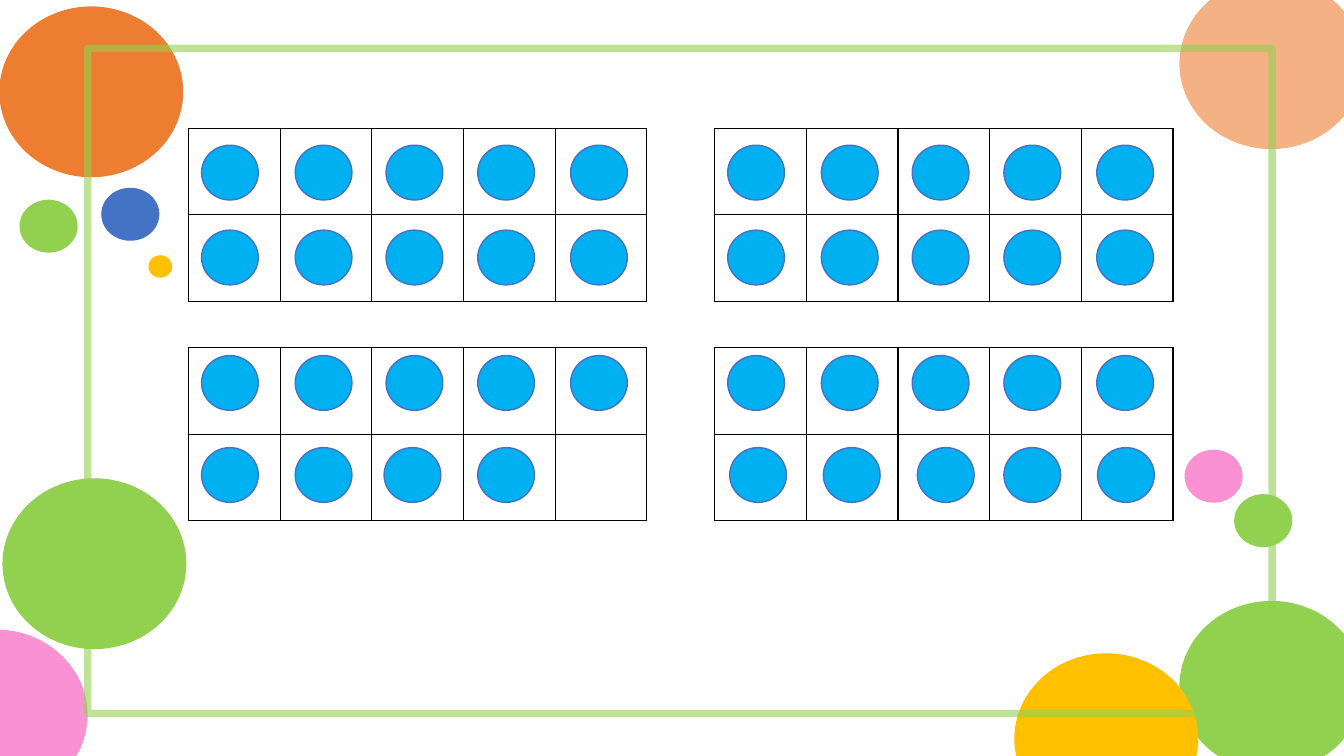
"""Build a slide of four ten frames that show thirty-nine counters."""
from dataclasses import dataclass

from lxml.etree import SubElement
from pptx import Presentation
from pptx.dml.color import RGBColor
from pptx.enum.shapes import MSO_SHAPE as Preset
from pptx.oxml.ns import qn
from pptx.shapes.autoshape import Shape
from pptx.slide import Slide
from pptx.table import _Cell as Cell
from pptx.util import Cm, Pt

ORANGE, PEACH, AMBER = "ED7D31", "F4B183", "FFC000"
GREEN, PINK, BLUE = "92D050", "F991D3", "4472C4"
SKY, BLACK, WHITE = "00B0F0", "000000", "FFFFFF"

LARGE, MEDIUM, SMALL = (4.6, 4.27), (1.43, 1.3), (0.56, 0.53)
COUNTER = (1.43, 1.38)
COLUMNS, ROWS = 5, 2
CELL_WIDTH, CELL_HEIGHT = 2.31, 2.18
EVEN = (0.33, 2.69, 4.98, 7.29, 9.63)


@dataclass(frozen=True)
class Bubble:
    left: float
    top: float
    size: tuple[float, float]
    colour: str


@dataclass(frozen=True)
class CounterRow:
    top: float
    lefts: tuple[float, ...] = EVEN


@dataclass(frozen=True)
class TenFrame:
    left: float
    top: float
    rows: tuple[CounterRow, CounterRow]
    fill: str | None = None


BUBBLES = (
    Bubble(0, 0.18, LARGE, ORANGE),
    Bubble(29.74, 15.16, LARGE, GREEN),
    Bubble(29.74, -0.53, LARGE, PEACH),
    Bubble(25.58, 16.48, LARGE, AMBER),
    Bubble(31.12, 12.47, MEDIUM, GREEN),
    Bubble(29.87, 11.35, MEDIUM, PINK),
    Bubble(-2.41, 15.88, LARGE, PINK),
    Bubble(0.08, 12.07, LARGE, GREEN),
    Bubble(0.51, 5.05, MEDIUM, GREEN),
    Bubble(2.57, 4.75, MEDIUM, BLUE),
    Bubble(3.76, 6.45, SMALL, AMBER),
)

FULL_ROWS = (CounterRow(0.43), CounterRow(2.57))
NINE = (CounterRow(0.2), CounterRow(2.52, (0.33, 2.69, 4.93, 7.29)))
TEN = (CounterRow(0.2), CounterRow(2.52, (0.38, 2.74, 5.11, 7.29, 9.65)))
TEN_FRAMES = (
    TenFrame(4.75, 3.23, FULL_ROWS),
    TenFrame(4.75, 8.76, NINE, WHITE),
    TenFrame(18.01, 3.23, FULL_ROWS),
    TenFrame(18.01, 8.76, TEN, WHITE),
)


def colour(value: str) -> RGBColor:
    """Turn a hex string into a colour."""
    return RGBColor.from_string(value)


def draw_shape(slide: Slide, preset: Preset, left: float, top: float,
               size: tuple[float, float], *, line: str,
               fill: str | None = None, weight: float = 1) -> Shape:
    """Draw one preset shape measured in centimetres."""
    shape = slide.shapes.add_shape(preset, Cm(left), Cm(top), *map(Cm, size))
    shape.shadow.inherit = False
    if fill:
        shape.fill.solid()
        shape.fill.fore_color.rgb = colour(fill)
    else:
        shape.fill.background()
    shape.line.color.rgb = colour(line)
    shape.line.width = Pt(weight)
    return shape


def draw_border(slide: Slide) -> None:
    """Draw the translucent green border of the page."""
    border = draw_shape(slide, Preset.RECTANGLE, 2.21, 1.22, (29.85, 16.76),
                        line=GREEN, weight=5.25)
    tint = border.line._ln.find(f".//{qn('a:srgbClr')}")
    SubElement(tint, qn("a:alpha"), val="58000")


def format_cell(cell: Cell, fill: str | None) -> None:
    """Give a cell black edges and its fill."""
    properties = cell._tc.get_or_add_tcPr()
    for side in ("a:lnL", "a:lnR", "a:lnT", "a:lnB"):
        edge = SubElement(properties, qn(side), w=str(Pt(1)))
        paint = SubElement(edge, qn("a:solidFill"))
        SubElement(paint, qn("a:srgbClr"), val=BLACK)
    if fill:
        cell.fill.solid()
        cell.fill.fore_color.rgb = colour(fill)
    else:
        cell.fill.background()


def draw_ten_frame(slide: Slide, frame: TenFrame) -> None:
    """Draw a ten frame with its counters."""
    grid = slide.shapes.add_table(
        ROWS, COLUMNS, Cm(frame.left), Cm(frame.top),
        Cm(COLUMNS * CELL_WIDTH), Cm(ROWS * CELL_HEIGHT)).table
    grid.first_row = grid.horz_banding = False
    for cell in grid.iter_cells():
        format_cell(cell, frame.fill)
    for row in frame.rows:
        for left in row.lefts:
            draw_shape(slide, Preset.OVAL, frame.left + left,
                       frame.top + row.top, COUNTER, fill=SKY, line=BLUE)


def main() -> None:
    """Build and save the slide."""
    deck = Presentation()
    deck.slide_width, deck.slide_height = Cm(33.87), Cm(19.05)
    slide = deck.slides.add_slide(deck.slide_layouts[6])
    for bubble in BUBBLES:
        draw_shape(slide, Preset.OVAL, bubble.left, bubble.top, bubble.size,
                   fill=bubble.colour, line=bubble.colour)
    draw_border(slide)
    for frame in TEN_FRAMES:
        draw_ten_frame(slide, frame)
    deck.save("out.pptx")


if __name__ == "__main__":
    main()
